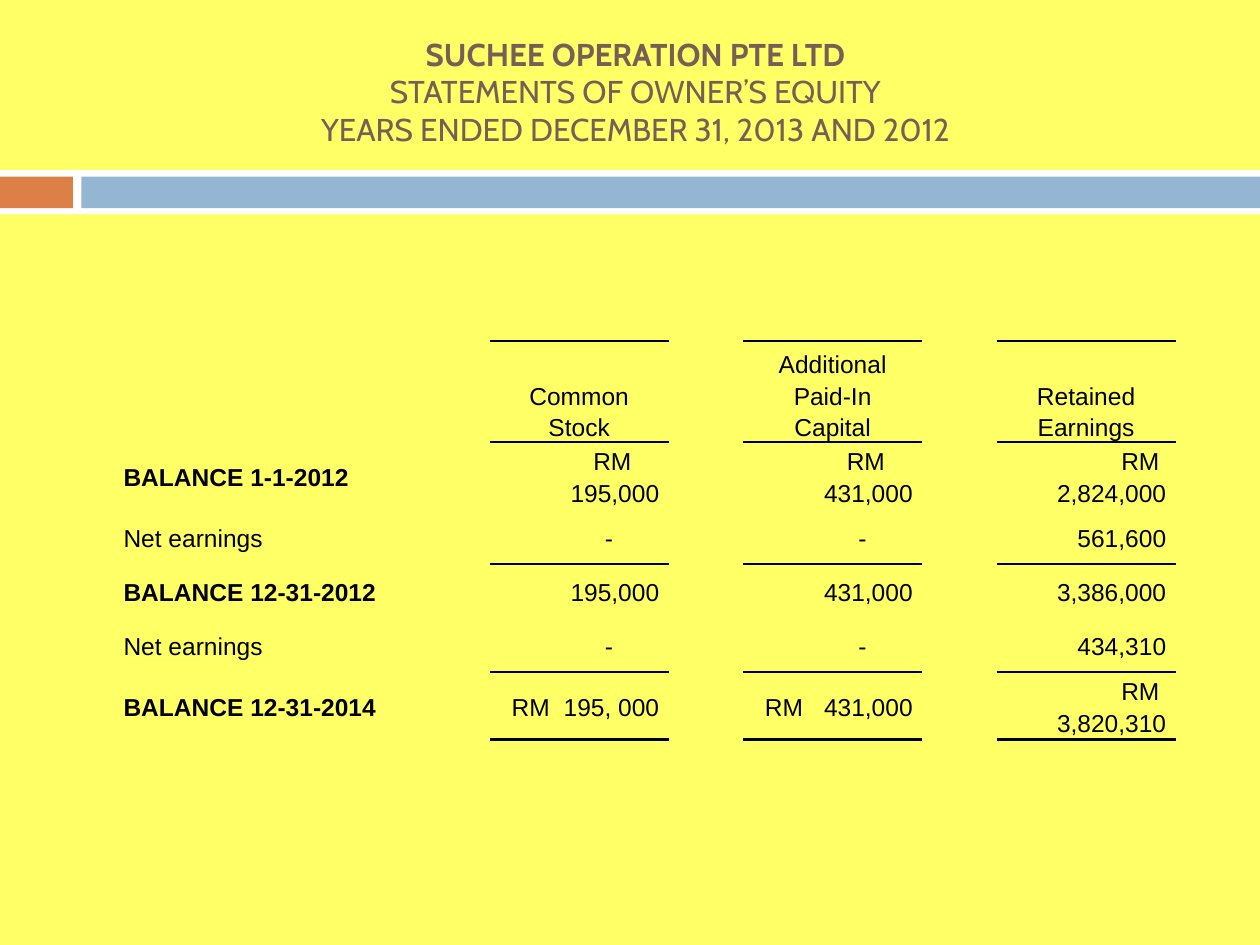
from lxml.etree import SubElement as Sub
from pptx import Presentation
from pptx.dml.color import RGBColor as Rgb
from pptx.enum.shapes import MSO_SHAPE as Shape
from pptx.enum.text import MSO_ANCHOR as Anchor, PP_ALIGN as Align
from pptx.oxml.ns import qn
from pptx.util import Cm, Pt

HUES = {"page": "FFFF66", "band": "FFFFFF", "tab": "DD8047",
        "bar": "94B6D2", "title": "775F55", "ink": "000000"}
PLAIN = "{2D5ABB26-0587-4C30-8999-92F81FD0307C}"  # table style without grid

# Column widths and row height of the table, in cm
COLS = [6.35, 1.22, 3.61, 1.5, 3.61, 1.5, 3.61]
ROW = 1.09
# Rule weight in points at each row boundary
RULES = {0: 1, 1: 1, 3: 1, 5: 1, 6: 2.25}

HEADS = [["Common", "Stock"], ["Additional", "Paid-In", "Capital"],
         ["Retained", "Earnings"]]
# An amount in RM is (figure, extra gap in points, figure on its own line)
ROWS = [
    ("BALANCE 1-1-2012", [("195,000", 12, True), ("431,000", 12, True),
                          ("2,824,000", 0, True)]),
    ("Net earnings", ["-", "-", "561,600"]),
    ("BALANCE 12-31-2012", ["195,000", "431,000", "3,386,000"]),
    ("Net earnings", ["-", "-", "434,310"]),
    ("BALANCE 12-31-2014", [("195, 000", 4, False), ("431,000", 8, False),
                            ("3,820,310", 0, True)]),
]


class Deck:
    def __init__(self):
        self.prs = Presentation()
        self.prs.slide_width, self.prs.slide_height = Cm(25.4), Cm(19.05)
        self.slide = self.prs.slides.add_slide(self.prs.slide_layouts[6])
        self.paint(self.slide.background.fill, "page")

    def paint(self, fill, hue):
        fill.solid()
        fill.fore_color.rgb = Rgb.from_string(HUES[hue])

    def rect(self, x, y, w, h, hue):
        box = self.slide.shapes.add_shape(
            Shape.RECTANGLE, Cm(x), Cm(y), Cm(w), Cm(h))
        box.shadow.inherit = False
        box.line.fill.background()
        self.paint(box.fill, hue)

    def run(self, para, text, size=14, face="Arial", hue="ink", bold=False):
        run = para.add_run()
        run.text = text
        font = run.font
        font.size, font.name, font.bold = Pt(size), face, bold
        font.color.rgb = Rgb.from_string(HUES[hue])
        return run

    def title(self, x, y, w, h, lines):
        frame = self.slide.shapes.add_textbox(
            Cm(x), Cm(y), Cm(w), Cm(h)).text_frame
        frame.word_wrap = True
        frame.vertical_anchor = Anchor.MIDDLE
        para = frame.paragraphs[0]
        para.alignment = Align.CENTER
        for i, line in enumerate(lines):
            if i:
                para.add_line_break()
            self.run(para, line, 18, "Cabin", "title", i == 0)

    def grid(self, x, y, cols, rows, high):
        frame = self.slide.shapes.add_table(
            rows, len(cols), Cm(x), Cm(y), Cm(sum(cols)), Cm(rows * high))
        grid = frame.table
        grid.first_row = grid.horz_banding = False
        frame._element.find(".//" + qn("a:tableStyleId")).text = PLAIN
        for col, wide in zip(grid.columns, cols):
            col.width = Cm(wide)
        for row in grid.rows:
            row.height = Cm(high)
        return grid

    def rule(self, cell, side, wide):
        line = Sub(cell._tc.get_or_add_tcPr(), qn(side), w=str(Pt(wide)))
        if wide:
            fill = Sub(line, qn("a:solidFill"))
            Sub(fill, qn("a:srgbClr"), val=HUES["ink"])
        else:
            Sub(line, qn("a:noFill"))

    def para(self, cell, align, anchor=Anchor.MIDDLE, before=12):
        cell.margin_left = cell.margin_right = Cm(0.19)
        cell.margin_top = cell.margin_bottom = 0
        cell.vertical_anchor = anchor
        para = cell.text_frame.paragraphs[0]
        para.alignment, para.line_spacing = align, 1.15
        para.space_before = Pt(before)
        para.font.size = Pt(14)
        Sub(para._p, qn("a:endParaRPr"), sz="1400")
        return para

    def head(self, cell, words):
        para = self.para(cell, Align.CENTER, Anchor.BOTTOM, 0)
        for i, word in enumerate(words):
            if i:
                para.add_line_break()
            self.run(para, word)

    def money(self, cell, item):
        para = self.para(cell, Align.RIGHT)
        if item == "-":
            cell.margin_right = Cm(1.12)
        if isinstance(item, tuple):
            item, gap, split = item
            self.run(para, "RM")
            space = self.run(para, " ")
            space.font._element.set("spc", str(gap * 100))
            if split:
                para.add_line_break()
        self.run(para, item)


def main():
    deck = Deck()

    # Band under the title
    deck.rect(0, 3.43, 25.4, 0.89, "band")
    deck.rect(0, 3.56, 1.47, 0.64, "tab")
    deck.rect(1.64, 3.56, 23.76, 0.64, "bar")

    deck.title(1.48, 0.76, 22.66, 2.16, [
        "SUCHEE OPERATION PTE LTD", "STATEMENTS OF OWNER’S EQUITY",
        "YEARS ENDED DECEMBER 31, 2013 AND 2012"])

    # Equity table: label column, then figures in every second column
    grid = deck.grid(2.3, 6.87, COLS, len(ROWS) + 2, ROW)
    figs = range(2, len(COLS), 2)
    for r in range(len(grid.rows)):
        for c in range(len(COLS)):
            cell = grid.cell(r, c)
            if c in figs:
                for side, edge in (("a:lnT", r), ("a:lnB", r + 1)):
                    deck.rule(cell, side, RULES.get(edge, 0))
            cell.fill.background()

    for c, words in zip(figs, HEADS):
        deck.head(grid.cell(0, c), words)

    for r, (label, items) in enumerate(ROWS, 1):
        para = deck.para(grid.cell(r, 0), Align.LEFT)
        deck.run(para, label, bold=label.startswith("BALANCE"))
        for c, item in zip(figs, items):
            deck.money(grid.cell(r, c), item)

    deck.prs.save("out.pptx")


if __name__ == "__main__":
    main()
